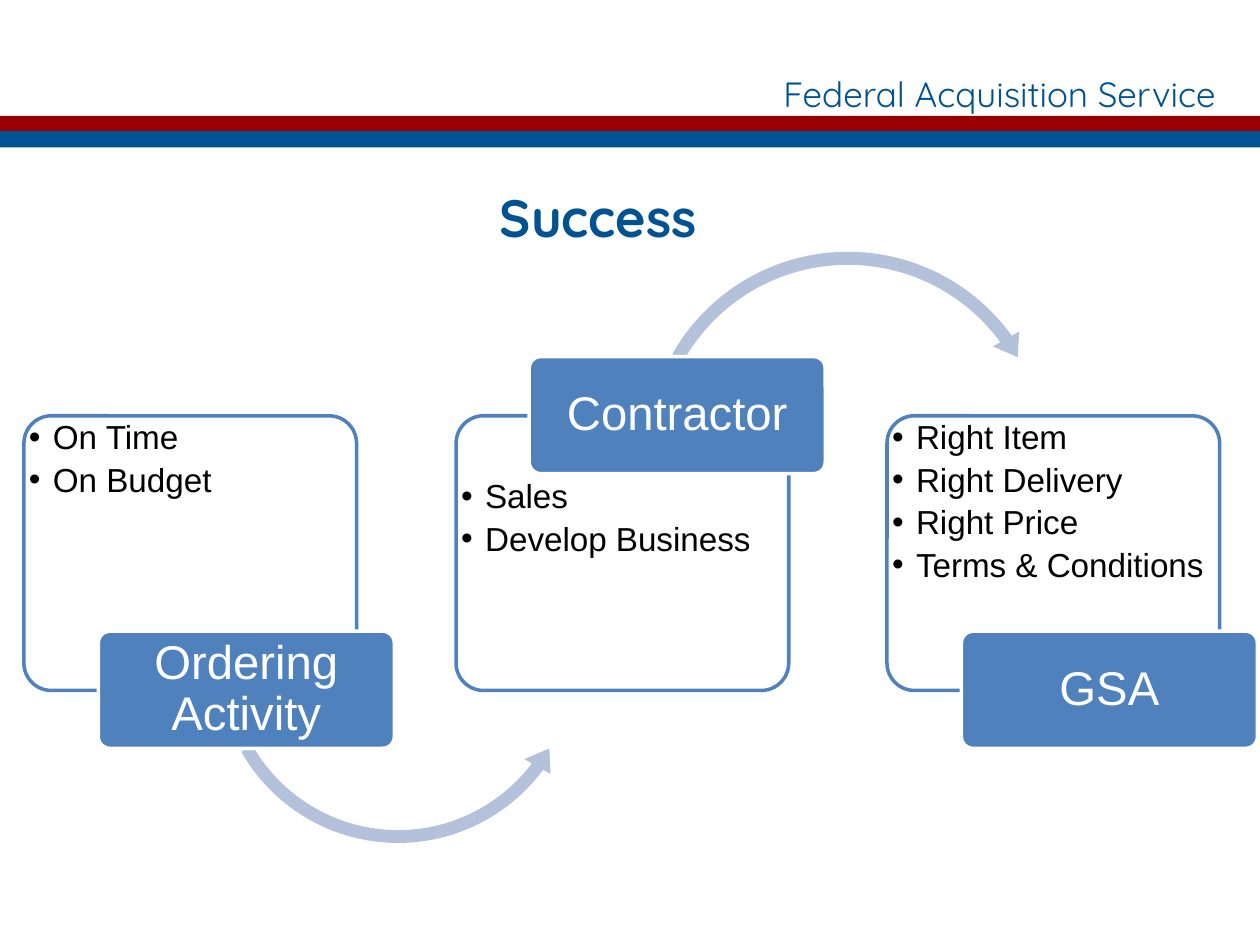
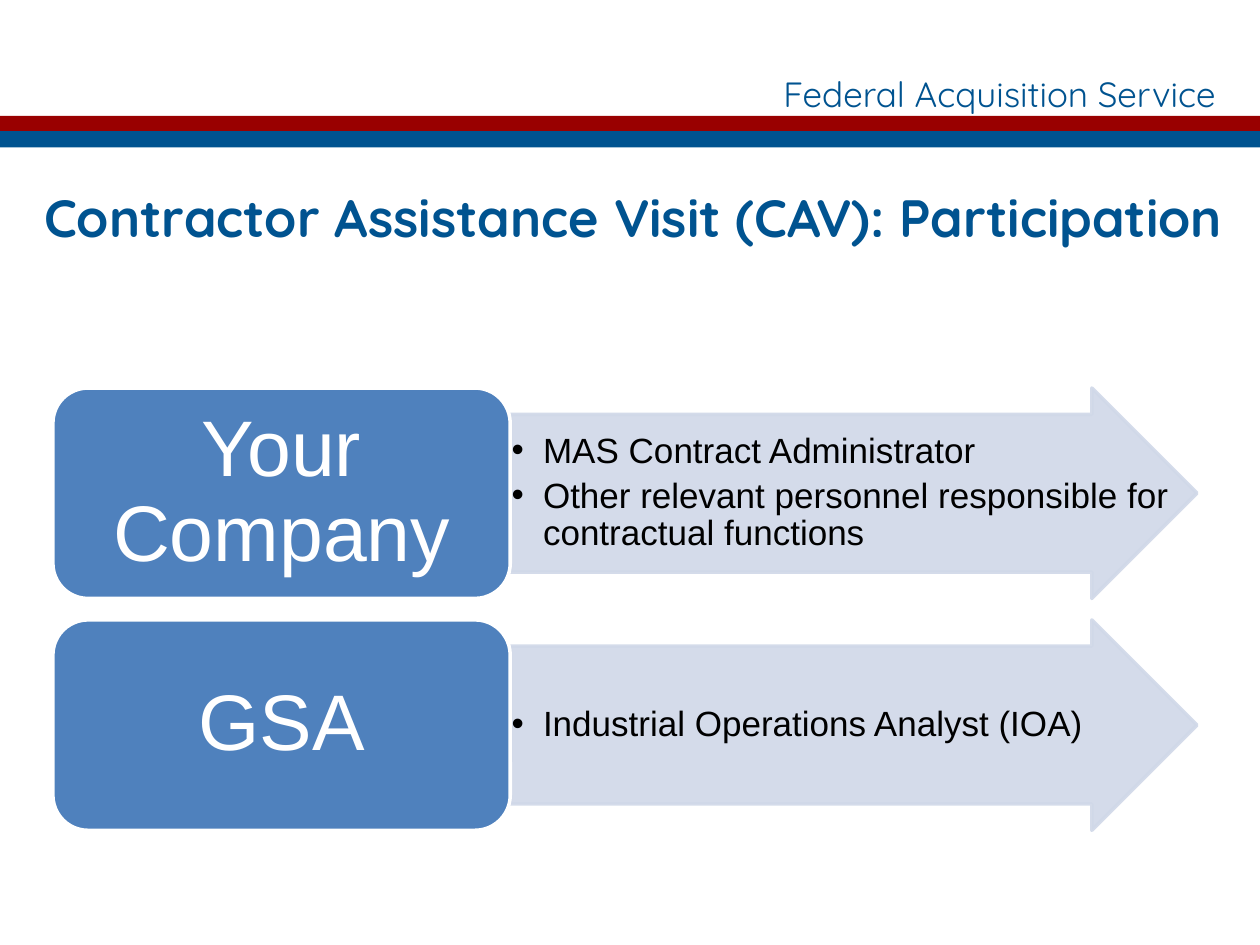
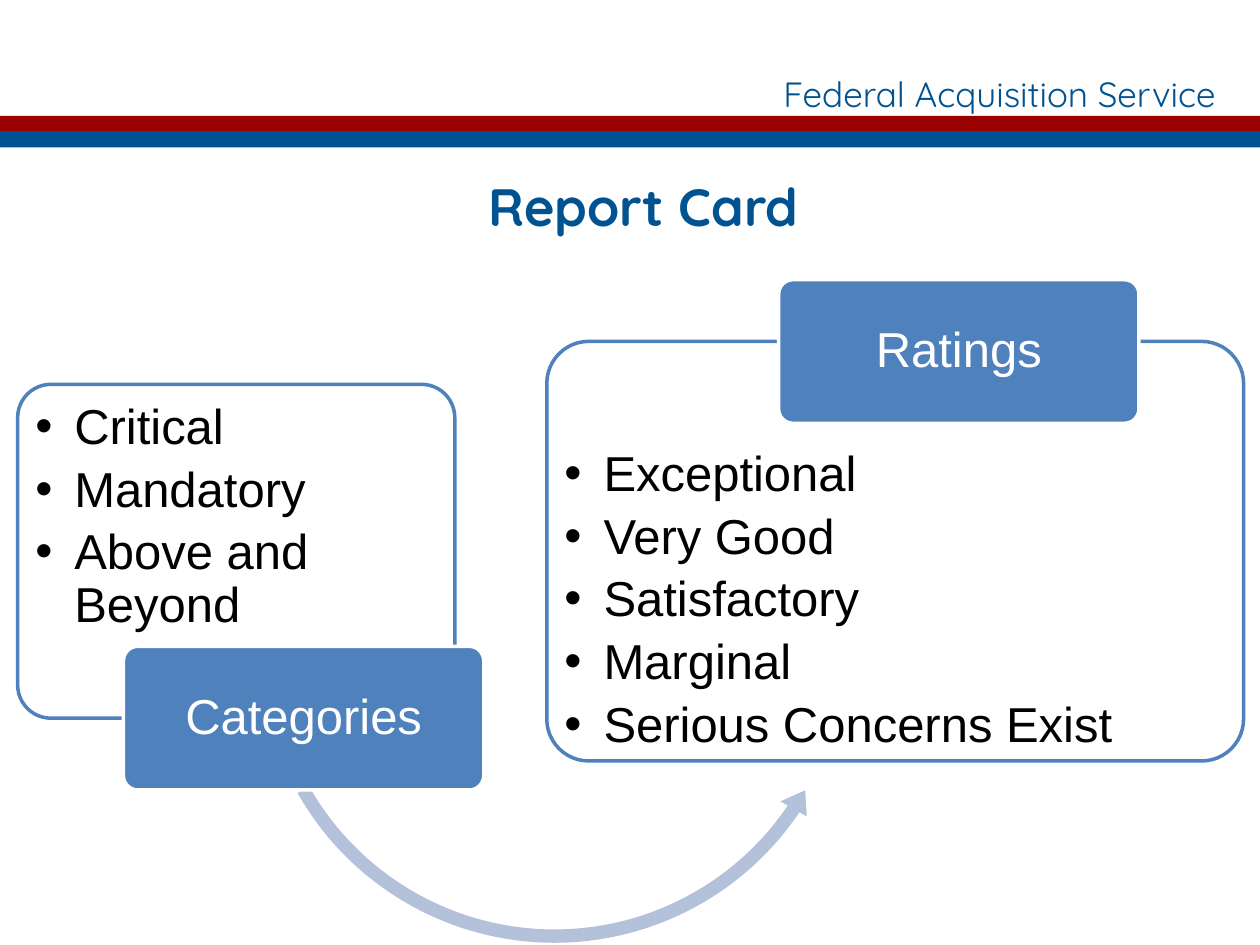
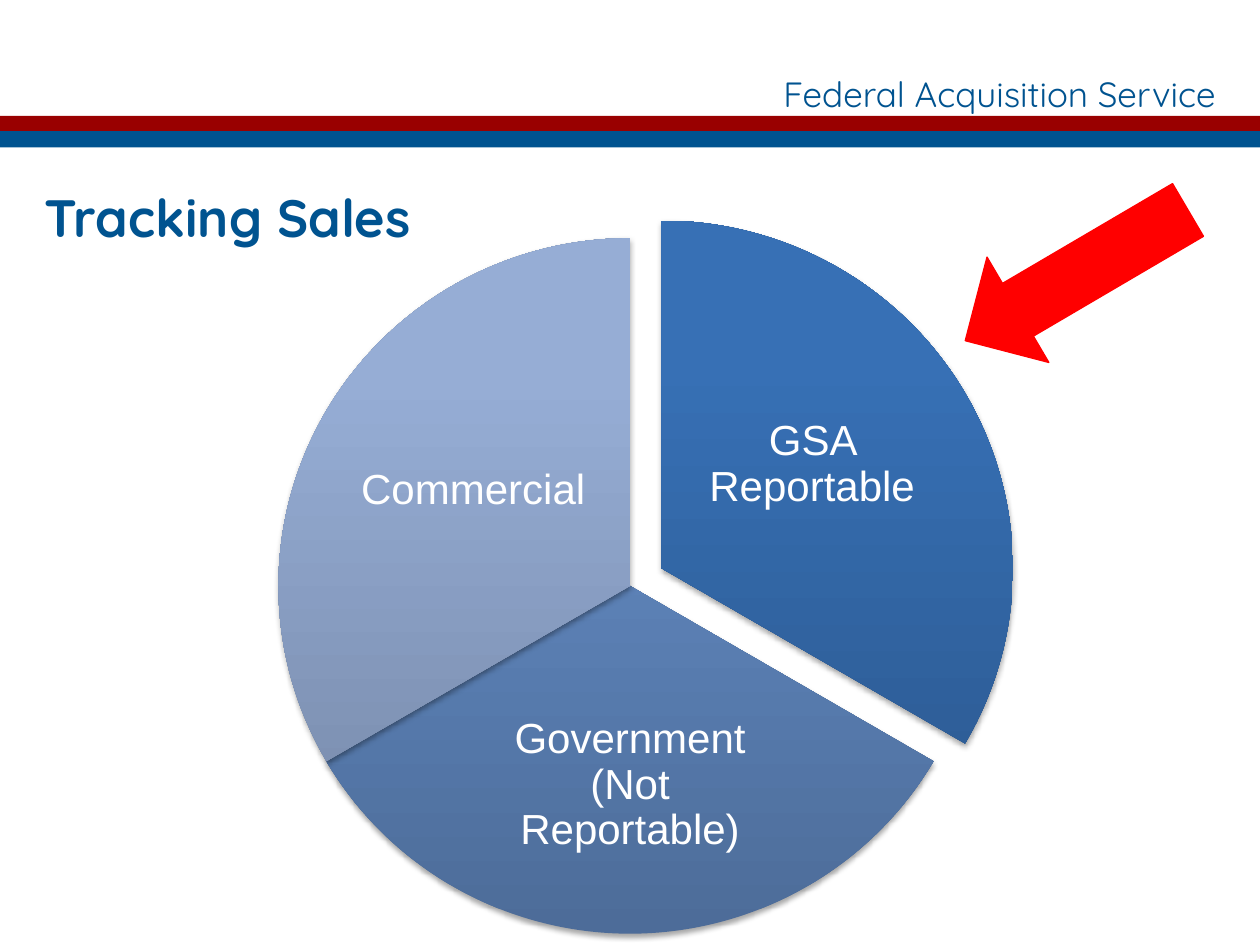
from lxml.etree import SubElement
from pptx import Presentation
from pptx.dml.color import RGBColor
from pptx.enum.shapes import MSO_SHAPE as Shape
from pptx.enum.text import MSO_ANCHOR as Anchor, MSO_AUTO_SIZE as AutoSize, PP_ALIGN as Align
from pptx.oxml.ns import qn
from pptx.util import Inches, Pt

COLORS = {
    "navy": "005390", "crimson": "990000", "blue": "4F81BD", "pale": "D0D8E8",
    "mist": "B3C1DB", "white": "FFFFFF", "black": "000000", "red": "FF0000",
    "reportable dark": "2A568B", "reportable light": "3770B5",
    "government dark": "4D6C99", "government light": "648DC7",
    "commercial dark": "7385A4", "commercial light": "96ADD5",
}
HEADER = ("Federal Acquisition Service", (5.5, 0.55, 4.25, 0.38))
BANDS = [("crimson", 0.92), ("navy", 1.04)]
BAND_HEIGHT = 0.13

SUCCESS = {
    "title": ("Success", (0.5, 1.42, 8.5, 0.61), Align.CENTER),
    "label size": (2.35, 0.93),
    "list format": {"size": 19, "indent": 0.19, "margins": (0.04, 0.04)},
    "label font size": 27,
    "cards": [
        {"label": "Ordering Activity", "items": ["On Time", "On Budget"],
         "box": (0.19, 3.3, 2.64, 2.18), "label at": (0.78, 5.01), "label on top": False,
         "arrow": (Shape.LEFT_CIRCULAR_ARROW, (1.66, 3.76, 3, 3),
                   (0.034, 4.266, 22.021, 90.245, 0.04))},
        {"label": "Contractor", "items": ["Sales", "Develop Business"],
         "box": (3.62, 3.3, 2.64, 2.18), "label at": (4.2, 2.83), "label on top": True,
         "arrow": (Shape.CIRCULAR_ARROW, (5.06, 1.93, 3.34, 3.34),
                   (0.031, 3.803, 194.442, 125.755, 0.036))},
        {"label": "GSA",
         "items": ["Right Item", "Right Delivery", "Right Price", "Terms & Conditions"],
         "box": (7.04, 3.3, 2.64, 2.18), "label at": (7.63, 5.01), "label on top": False},
    ],
}
REPORT_CARD = {
    "title": ("Report Card", (0.86, 1.33, 8.5, 0.63), Align.CENTER),
    "label size": (2.86, 1.14),
    "list format": {"size": 28, "indent": 0.31, "margins": (0.14, 0.14)},
    "label font size": 28,
    "cards": [
        {"label": "Categories", "items": ["Critical", "Mandatory", "Above and Beyond"],
         "box": (0.14, 3.05, 3.47, 2.65), "label at": (0.98, 5.13), "label on top": False,
         "arrow": (Shape.LEFT_CIRCULAR_ARROW, (1.99, 2.73, 4.82, 4.82),
                   (0.022, 2.618, 20.394, 90.266, 0.025))},
        {"label": "Ratings",
         "items": ["Exceptional", "Very Good", "Satisfactory", "Marginal",
                   "Serious Concerns Exist"],
         "box": (4.34, 2.71, 5.53, 3.33), "label at": (6.18, 2.22), "label on top": True},
    ],
}
PARTICIPATION_TITLE = ("Contractor Assistance Visit (CAV): Participation",
                       (0.25, 1.42, 9.75, 0.61), Align.LEFT)
PARTICIPANTS = [
    ("Your Company", ["MAS Contract Administrator",
                      "Other relevant personnel responsible for contractual functions"]),
    ("GSA", ["Industrial Operations Analyst (IOA)"]),
]
SALES_TITLE = ("Tracking Sales", (0.25, 1.42, 8.5, 0.77), Align.LEFT)
PIE_SIZE = (5.58, 5.52)
SALES = [
    ("GSA Reportable", "reportable", (2.46, 1.75), (270, 30), (5.5, 2.77, 1.89, 1.84)),
    ("Government (Not Reportable)", "government", (2.21, 1.89), (30, 150),
     (3.74, 5.38, 2.52, 1.71)),
    ("Commercial", "commercial", (2.21, 1.89), (150, 270), (2.81, 2.98, 1.89, 1.84)),
]


def rgb(name):
    return RGBColor.from_string(COLORS[name])


def set_values(target, values):
    for name, value in values.items():
        setattr(target, name, value)


def place(shape, box):
    set_values(shape, dict(zip(("left", "top", "width", "height"), map(Inches, box))))


def add_block(slide, kind, box, fill=None, line=None, line_width=2, adjustments=()):
    shape = slide.shapes.add_shape(kind, *map(Inches, box))
    shape.shadow.inherit = False
    for index, value in enumerate(adjustments):
        shape.adjustments[index] = value
    if fill:
        shape.fill.solid()
        shape.fill.fore_color.rgb = rgb(fill)
    if line:
        shape.line.color.rgb = rgb(line)
        shape.line.width = Pt(line_width)
    else:
        shape.line.fill.background()
    return shape


def make_translucent(shape, *fills):
    for fill in fills:
        for color in shape.element.spPr.xpath(f"{fill}/a:srgbClr"):
            SubElement(color, qn("a:alpha"), val="90000")


def set_frame(frame, margins, anchor):
    side, edge = map(Inches, margins)
    set_values(frame, {
        "word_wrap": True, "auto_size": AutoSize.NONE, "vertical_anchor": anchor,
        "margin_left": side, "margin_right": side, "margin_top": edge, "margin_bottom": edge,
    })


def set_font(paragraph, size, color, name="Arial", bold=False):
    set_values(paragraph.font, {"size": Pt(size), "name": name, "bold": bold})
    paragraph.font.color.rgb = rgb(color)


def write_label(shape, text, size, margins):
    set_frame(shape.text_frame, margins, Anchor.MIDDLE)
    paragraph = shape.text_frame.paragraphs[0]
    paragraph.text = text
    set_values(paragraph, {"alignment": Align.CENTER, "line_spacing": 0.9})
    set_font(paragraph, size, "white")


def add_textbox(slide, box):
    return slide.shapes.add_textbox(*map(Inches, box))


def add_list(slide, box, items, size, indent, margins, anchor=Anchor.TOP):
    frame = add_textbox(slide, box).text_frame
    set_frame(frame, margins, anchor)
    for index, item in enumerate(items):
        paragraph = frame.add_paragraph() if index else frame.paragraphs[0]
        paragraph.text = item
        properties = paragraph._p.get_or_add_pPr()
        properties.set("marL", str(Inches(indent)))
        properties.set("indent", str(-Inches(indent)))
        SubElement(properties, qn("a:buFont"), typeface="Arial")
        SubElement(properties, qn("a:buChar"), char="•")
        set_values(paragraph, {"line_spacing": 0.9, "space_after": Pt(size * 0.2)})
        set_font(paragraph, size, "black")


def add_header(presentation, slide):
    text, box = HEADER
    header = add_textbox(slide, box)
    set_frame(header.text_frame, (0.1, 0.05), Anchor.MIDDLE)
    paragraph = header.text_frame.paragraphs[0]
    paragraph.text = text
    paragraph.alignment = Align.RIGHT
    set_font(paragraph, 20, "navy", "Quicksand")
    bands = [add_block(slide, Shape.RECTANGLE, (0, top, 10, BAND_HEIGHT), color)
             for color, top in BANDS]
    for shape in [header, *bands]:
        presentation.slide_master.element.cSld.spTree.append(shape.element)


def add_titled_slide(presentation, title):
    text, box, alignment = title
    slide = presentation.slides.add_slide(presentation.slide_layouts[5])
    place(slide.shapes.title, box)
    frame = slide.shapes.title.text_frame
    set_frame(frame, (0.1, 0.05), Anchor.TOP)
    paragraph = frame.paragraphs[0]
    paragraph.text = text
    paragraph.alignment = alignment
    set_font(paragraph, 30, "navy", "Quicksand", True)
    return slide


def build_cards(presentation, content):
    slide = add_titled_slide(presentation, content["title"])
    for card in content["cards"]:
        left, top, width, height = card["box"]
        panel = add_block(slide, Shape.ROUNDED_RECTANGLE, card["box"], "white", "blue",
                          adjustments=[0.1])
        make_translucent(panel, "a:solidFill")
        label_strip = height * 3 / 14
        list_top = top + label_strip if card["label on top"] else top
        add_list(slide, (left, list_top, width, height - label_strip), card["items"],
                 **content["list format"])
        if "arrow" in card:
            kind, box, adjustments = card["arrow"]
            add_block(slide, kind, box, "mist", adjustments=adjustments)
        label = add_block(slide, Shape.ROUNDED_RECTANGLE,
                          card["label at"] + content["label size"], "blue", "white",
                          adjustments=[0.1])
        write_label(label, card["label"], content["label font size"], (0.06, 0.04))
    return slide


def build_participation(presentation):
    slide = add_titled_slide(presentation, PARTICIPATION_TITLE)
    left, first_top, label_width, arrow_width, height, pitch = 0.42, 3.08, 3.63, 5.45, 1.67, 1.84
    for index, (name, people) in enumerate(PARTICIPANTS):
        top = first_top + index * pitch
        arrow_box = (left + label_width, top, arrow_width, height)
        arrow = add_block(slide, Shape.RIGHT_ARROW, arrow_box, "pale", "pale",
                          adjustments=[0.75, 0.5])
        make_translucent(arrow, "a:solidFill", "a:ln/a:solidFill")
        add_list(slide, arrow_box, people, 20, 0.25, (0.01, 0.01), Anchor.MIDDLE)
        label = add_block(slide, Shape.ROUNDED_RECTANGLE, (left, top, label_width, height),
                          "blue", "white")
        write_label(label, name, 45, (0.19, 0.09))


def add_soft_shadow(shape):
    effects = shape.element.spPr.find(qn("a:effectLst"))
    shadow = SubElement(effects, qn("a:outerShdw"), blurRad=str(Pt(3.1)), dist=str(Pt(1.8)),
                        dir="5400000", rotWithShape="0")
    color = SubElement(shadow, qn("a:srgbClr"), val=COLORS["black"])
    SubElement(color, qn("a:alpha"), val="35000")


def build_sales(presentation):
    slide = add_titled_slide(presentation, SALES_TITLE)
    for text, tone, corner, angles, text_box in SALES:
        sector = add_block(slide, Shape.PIE, corner + PIE_SIZE,
                           adjustments=[angle * 0.6 for angle in angles])
        sector.fill.gradient()
        sector.fill.gradient_angle = 90
        stops = sector.fill.gradient_stops
        for stop, shade, position in zip(stops, ("dark", "light"), (0, 0.8)):
            stop.color.rgb = rgb(f"{tone} {shade}")
            stop.position = position
        add_soft_shadow(sector)
        write_label(add_textbox(slide, text_box), text, 24, (0.03, 0.03))
    pointer = add_block(slide, Shape.RIGHT_ARROW, (7.52, 1.7, 2.05, 0.97), "red", "red", 0.75)
    pointer.rotation = 149.6


def main():
    presentation = Presentation()
    presentation.slide_width = Inches(10)
    presentation.slide_height = Inches(7.5)
    first_slide = build_cards(presentation, SUCCESS)
    add_header(presentation, first_slide)
    build_participation(presentation)
    build_cards(presentation, REPORT_CARD)
    build_sales(presentation)
    presentation.save("out.pptx")


if __name__ == "__main__":
    main()
